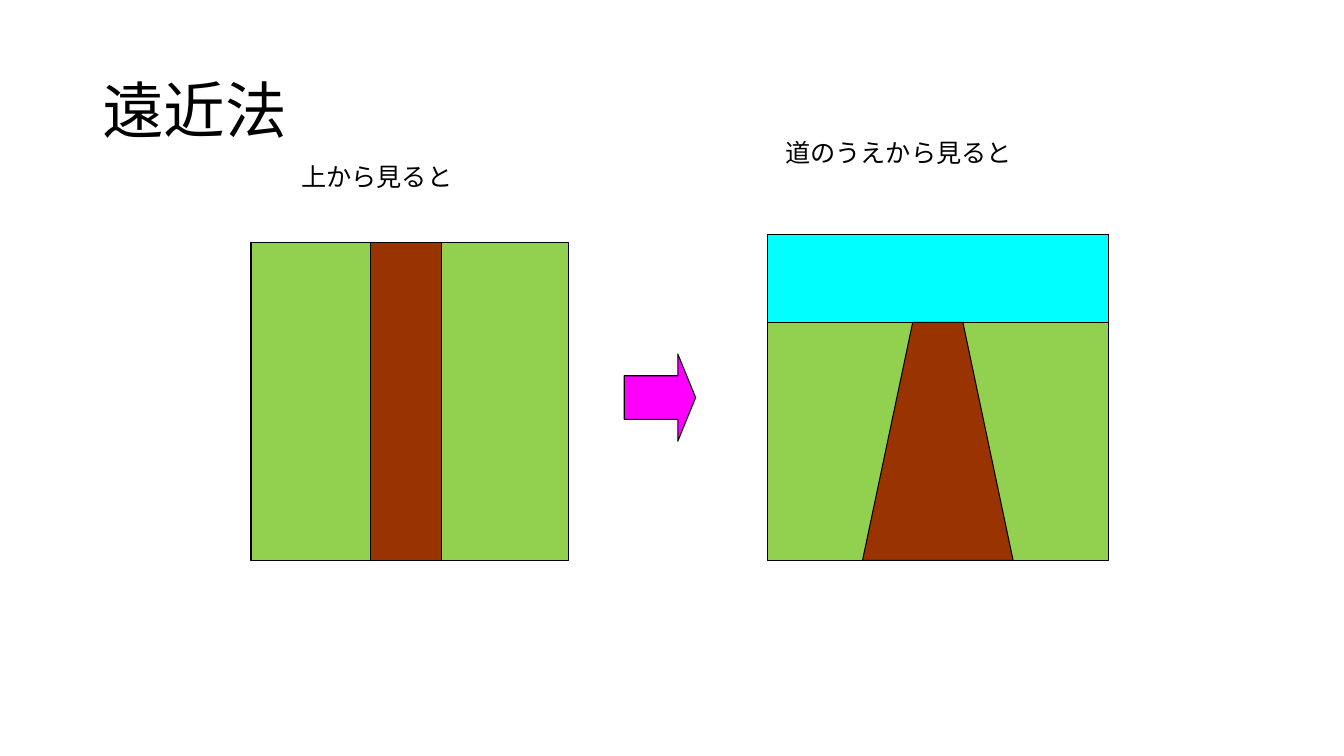
from pptx import Presentation
from pptx.dml.color import RGBColor
from pptx.enum.shapes import MSO_SHAPE
from pptx.enum.text import MSO_ANCHOR
from pptx.util import Pt

RECT, ARROW = MSO_SHAPE.RECTANGLE, MSO_SHAPE.RIGHT_ARROW
TOP, MIDDLE = MSO_ANCHOR.TOP, MSO_ANCHOR.MIDDLE
GRASS, ROAD, SKY, MAGENTA, BLACK = "92D050", "993300", "00FFFF", "FF00FF", "000000"


def rgb(value):
    return RGBColor.from_string(value)


class Painter:
    """Holds the slide and its style; all lengths are in points."""

    def __init__(self, slide, font="Calibri", outline=0.75):
        self.s = slide
        self.font = font
        self.outline = outline

    def style(self, sp, fill):
        sp.shadow.inherit = False
        sp.fill.solid()
        sp.fill.fore_color.rgb = rgb(fill)
        sp.line.color.rgb = rgb(BLACK)
        sp.line.width = Pt(self.outline)

    def shape(self, kind, x, y, w, h, fill, adjustments=()):
        sp = self.s.shapes.add_shape(kind, Pt(x), Pt(y), Pt(w), Pt(h))
        for i, value in enumerate(adjustments):
            sp.adjustments[i] = value
        self.style(sp, fill)

    def polygon(self, points, fill):
        start, *rest = [(Pt(x), Pt(y)) for x, y in points]
        builder = self.s.shapes.build_freeform(*start)
        builder.add_line_segments(rest, close=True)
        self.style(builder.convert_to_shape(), fill)

    def text(self, x, y, w, h, content, size, anchor=TOP, spacing=1.0):
        tf = self.s.shapes.add_textbox(Pt(x), Pt(y), Pt(w), Pt(h)).text_frame
        tf.word_wrap = True
        tf.vertical_anchor = anchor
        p = tf.paragraphs[0]
        p.line_spacing = spacing
        r = p.add_run()
        r.text = content
        r.font.name = self.font
        r.font.size = Pt(size)
        r.font.color.rgb = rgb(BLACK)


def main():
    prs = Presentation()
    prs.slide_width, prs.slide_height = Pt(960), Pt(540)
    d = Painter(prs.slides.add_slide(prs.slide_layouts[6]))

    d.text(66, 28.8, 828, 104.4, "遠近法", 44, MIDDLE, 0.9)
    d.text(208, 111.6, 198.7, 29, "上から見ると", 18)
    d.text(553.7, 94.3, 238.3, 29, "道のうえから見ると", 18)

    ground = 400.3

    # Field seen from above
    side = 226.8
    field_top = ground - side
    d.shape(RECT, 179.3, field_top, side, side, GRASS)
    d.shape(RECT, 264.4, field_top, 51, side, ROAD)

    # Field seen from the road
    view_x, view_y, view_w, sky_h = 547.9, 167.8, 244, 62.4
    horizon = view_y + sky_h
    d.shape(RECT, view_x, view_y, view_w, ground - view_y, GRASS)
    d.shape(RECT, view_x, view_y, view_w, sky_h, SKY)
    center = view_x + view_w / 2
    near, far = 53.8, 17.9
    d.polygon([(center - near, ground), (center - far, horizon),
               (center + far, horizon), (center + near, ground)], ROAD)

    d.shape(ARROW, 445.9, 252.8, 51, sky_h, MAGENTA, (0.5, 0.25))
    prs.save("out.pptx")


if __name__ == "__main__":
    main()
